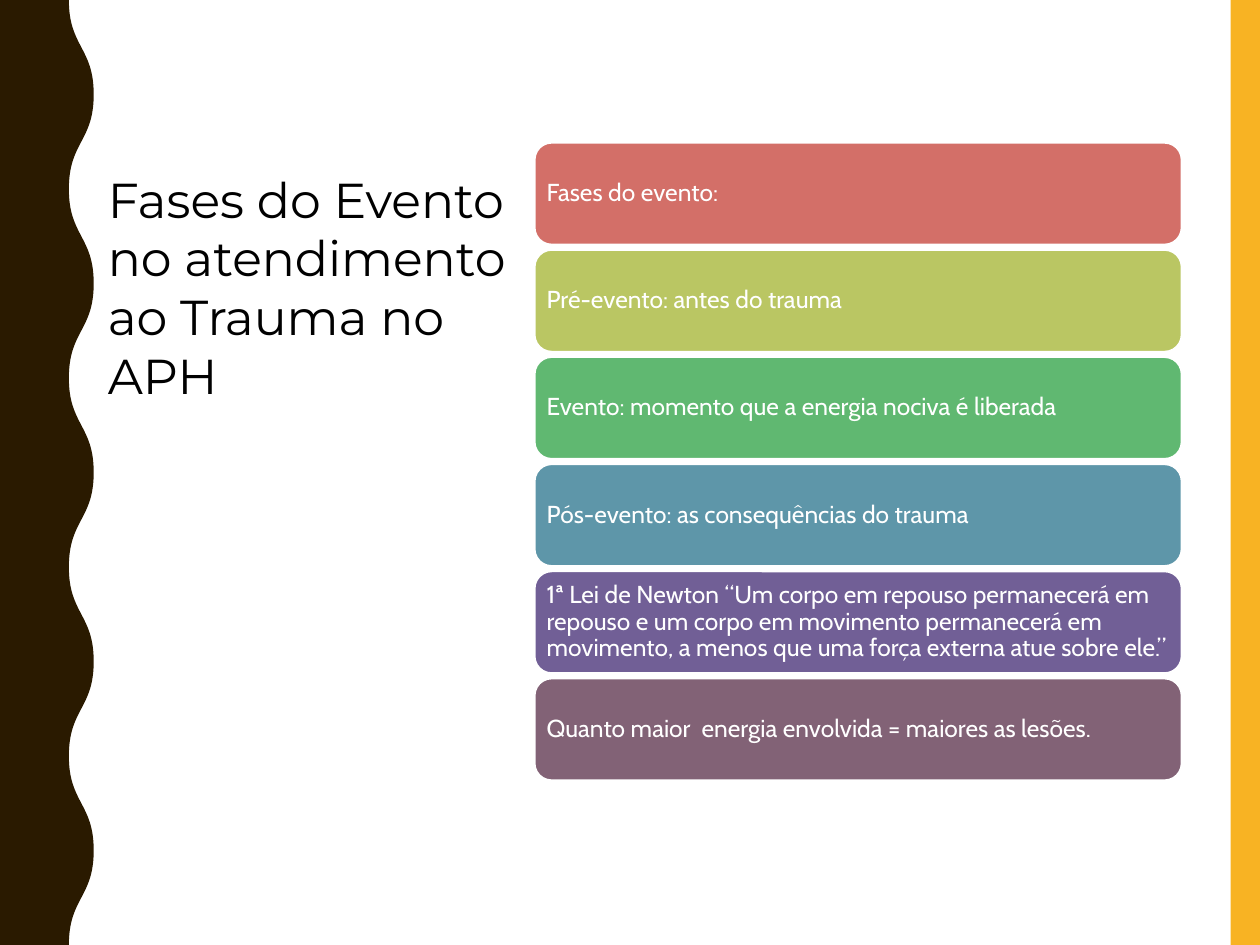
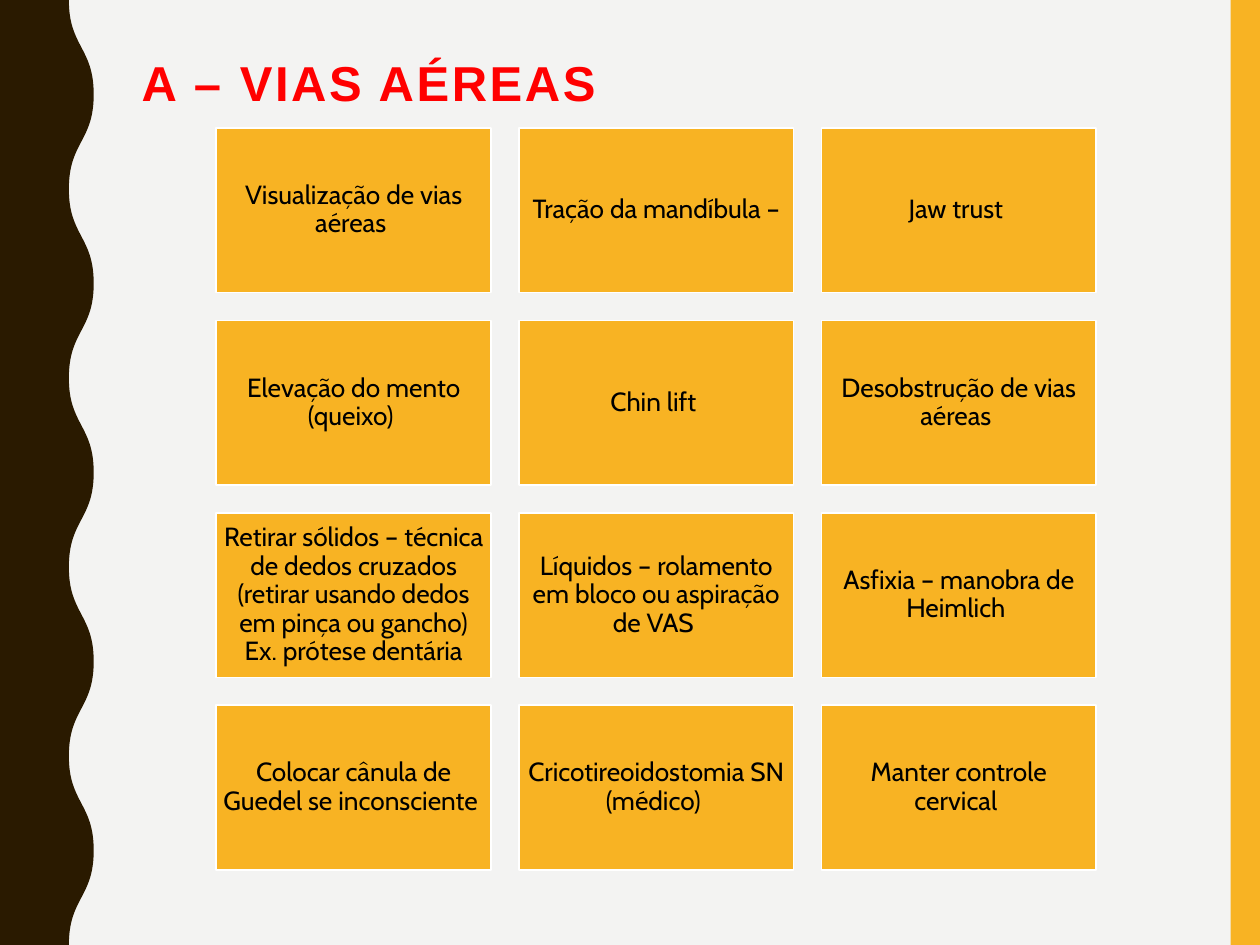
from dataclasses import dataclass

from lxml import etree
from pptx import Presentation
from pptx.dml.color import RGBColor as Rgb
from pptx.enum.shapes import MSO_SHAPE as Shape
from pptx.enum.text import MSO_ANCHOR as Anchor, MSO_AUTO_SIZE as AutoSize, PP_ALIGN as Align
from pptx.oxml.ns import qn
from pptx.util import Cm, Pt


@dataclass(frozen=True)
class Theme:
    """Colours, fonts and type sizes of the deck."""
    white: str = "FFFFFF"
    black: str = "000000"
    pale: str = "F3F3F2"
    amber: str = "F8B323"
    brown: str = "2A1A00"
    red: str = "FF0000"
    phase_fills: tuple = ("D36F68", "BAC663", "60B871", "5E96A9", "715F96", "826276")
    body_font: str = "Cabin"
    phase_title_font: str = "Montserrat"
    airway_title_font: str = "Arial"
    title_size: int = 28
    phase_size: int = 14
    step_size: int = 15


THEME = Theme()
SLIDE_WIDTH, SLIDE_HEIGHT = 25.4, 19.05
WAVE_TROUGH, WAVE_CREST, HALF_WAVES = 1.39, 1.89, 10

PHASES = (
    "Fases do evento:",
    "Pré-evento: antes do trauma",
    "Evento: momento que a energia nociva é liberada",
    "Pós-evento: as consequências do trauma",
    "1ª Lei de Newton “Um corpo em repouso permanecerá em repouso e um corpo em "
    "movimento permanecerá em movimento, a menos que uma força externa atue sobre ele.”",
    "Quanto maior  energia envolvida = maiores as lesões.",
)
AIRWAY_STEPS = (
    "Visualização de vias aéreas ",
    "Tração da mandíbula –",
    "Jaw trust ",
    "Elevação do mento (queixo) ",
    "Chin lift ",
    "Desobstrução de vias aéreas ",
    "Retirar sólidos – técnica de dedos cruzados (retirar usando dedos em pinça ou gancho) "
    "Ex. prótese dentária",
    "Líquidos – rolamento em bloco ou aspiração de VAS ",
    "Asfixia – manobra de Heimlich ",
    "Colocar cânula de Guedel se inconsciente ",
    "Cricotireoidostomia SN (médico) ",
    "Manter controle cervical ",
)


def paint(shape, fill, outline=None):
    """Give a shape a flat fill and an optional thin outline."""
    shape.shadow.inherit = False
    shape.fill.solid()
    shape.fill.fore_color.rgb = Rgb.from_string(fill)
    if outline:
        shape.line.color.rgb = Rgb.from_string(outline)
        shape.line.width = Pt(1)
    else:
        shape.line.fill.background()


def write(frame, text, font, size, color, align=Align.LEFT, spacing=0.9):
    """Write one formatted paragraph and return its run."""
    frame.word_wrap = True
    paragraph = frame.paragraphs[0]
    paragraph.alignment = align
    paragraph.line_spacing = spacing
    run = paragraph.add_run()
    run.text = text
    run.font.name = font
    run.font.size = Pt(size)
    run.font.color.rgb = Rgb.from_string(color)
    return run


def curve_edge(wave, nodes):
    """Turn the straight steps between the wave's nodes into smooth curves."""
    steps = list(wave._element.iter(qn("a:lnTo")))[1:len(nodes)]
    for step, (start_x, start_y), (end_x, end_y) in zip(steps, nodes, nodes[1:]):
        middle_y = (start_y + end_y) // 2
        curve = etree.Element(qn("a:cubicBezTo"))
        for x, y in ((start_x, middle_y), (end_x, middle_y), (end_x, end_y)):
            etree.SubElement(curve, qn("a:pt"), x=str(x), y=str(y))
        step.getparent().replace(step, curve)


def add_wave(slide):
    """Draw the brown band with its wavy right edge."""
    nodes = [(Cm(WAVE_CREST if node % 2 else WAVE_TROUGH), Cm(SLIDE_HEIGHT * node / HALF_WAVES))
             for node in range(HALF_WAVES + 1)]
    outline = slide.shapes.build_freeform(0, 0)
    outline.add_line_segments([*nodes, (0, Cm(SLIDE_HEIGHT))], close=True)
    wave = outline.convert_to_shape()
    curve_edge(wave, nodes)
    paint(wave, THEME.brown)
    return wave


def share_bands(deck, slide):
    """Draw the side bands and move them to the slide master."""
    amber_band = slide.shapes.add_shape(
        Shape.RECTANGLE, Cm(24.81), 0, Cm(0.59), Cm(SLIDE_HEIGHT))
    paint(amber_band, THEME.amber)
    master_tree = deck.slide_master.shapes._spTree
    for offset, band in enumerate((amber_band, add_wave(slide))):
        band._element.nvSpPr.cNvPr.set("id", str(100 + offset))
        master_tree.insert(2 + offset, band._element)


def add_slide(deck, background):
    """Add a title-only slide with its background."""
    slide = deck.slides.add_slide(deck.slide_layouts[5])
    slide.background.fill.solid()
    slide.background.fill.fore_color.rgb = Rgb.from_string(background)
    return slide


def add_title(slide, text, box, font, color, spacing):
    """Place the title placeholder and return its run."""
    title = slide.shapes.title
    title.left, title.top, title.width, title.height = map(Cm, box)
    title.text_frame.auto_size = AutoSize.NONE
    title.text_frame.vertical_anchor = Anchor.TOP
    return write(title.text_frame, text, font, THEME.title_size, color, spacing=spacing)


def add_card(slide, kind, box, text, fill, size, color, align):
    """Draw a filled card with its text."""
    card = slide.shapes.add_shape(kind, *map(Cm, box))
    paint(card, fill, THEME.white)
    frame = card.text_frame
    frame.margin_left = frame.margin_right = Cm(0.14)
    frame.margin_top = frame.margin_bottom = Cm(0.14)
    frame.vertical_anchor = Anchor.MIDDLE
    write(frame, text, THEME.body_font, size, color, align)


def build_phases(deck):
    """Build the slide on the phases of the trauma event."""
    slide = add_slide(deck, THEME.white)
    share_bands(deck, slide)
    add_title(slide, "Fases do Evento no atendimento ao Trauma no APH",
              (1.92, 3.28, 8.89, 6.25), THEME.phase_title_font, THEME.black, 1.0)
    for row, (phase, fill) in enumerate(zip(PHASES, THEME.phase_fills)):
        add_card(slide, Shape.ROUNDED_RECTANGLE, (10.78, 2.88 + row * 2.16, 13.04, 2.05),
                 phase, fill, THEME.phase_size, THEME.white, Align.LEFT)


def build_airways(deck):
    """Build the slide on the airway steps."""
    slide = add_slide(deck, THEME.pale)
    heading = add_title(slide, "A – VIAS AÉREAS", (2.6, 1.07, 21.21, 4.14),
                        THEME.airway_title_font, THEME.red, 0.9)
    heading.font.bold = True
    heading.font._element.set("spc", "150")
    for index, step in enumerate(AIRWAY_STEPS):
        row, column = divmod(index, 3)
        add_card(slide, Shape.RECTANGLE,
                 (4.36 + column * 6.1, 2.58 + row * 3.88, 5.54, 3.32),
                 step, THEME.amber, THEME.step_size, THEME.black, Align.CENTER)


def main():
    """Build and save the deck."""
    deck = Presentation()
    deck.slide_width, deck.slide_height = Cm(SLIDE_WIDTH), Cm(SLIDE_HEIGHT)
    build_phases(deck)
    build_airways(deck)
    deck.save("out.pptx")


if __name__ == "__main__":
    main()
